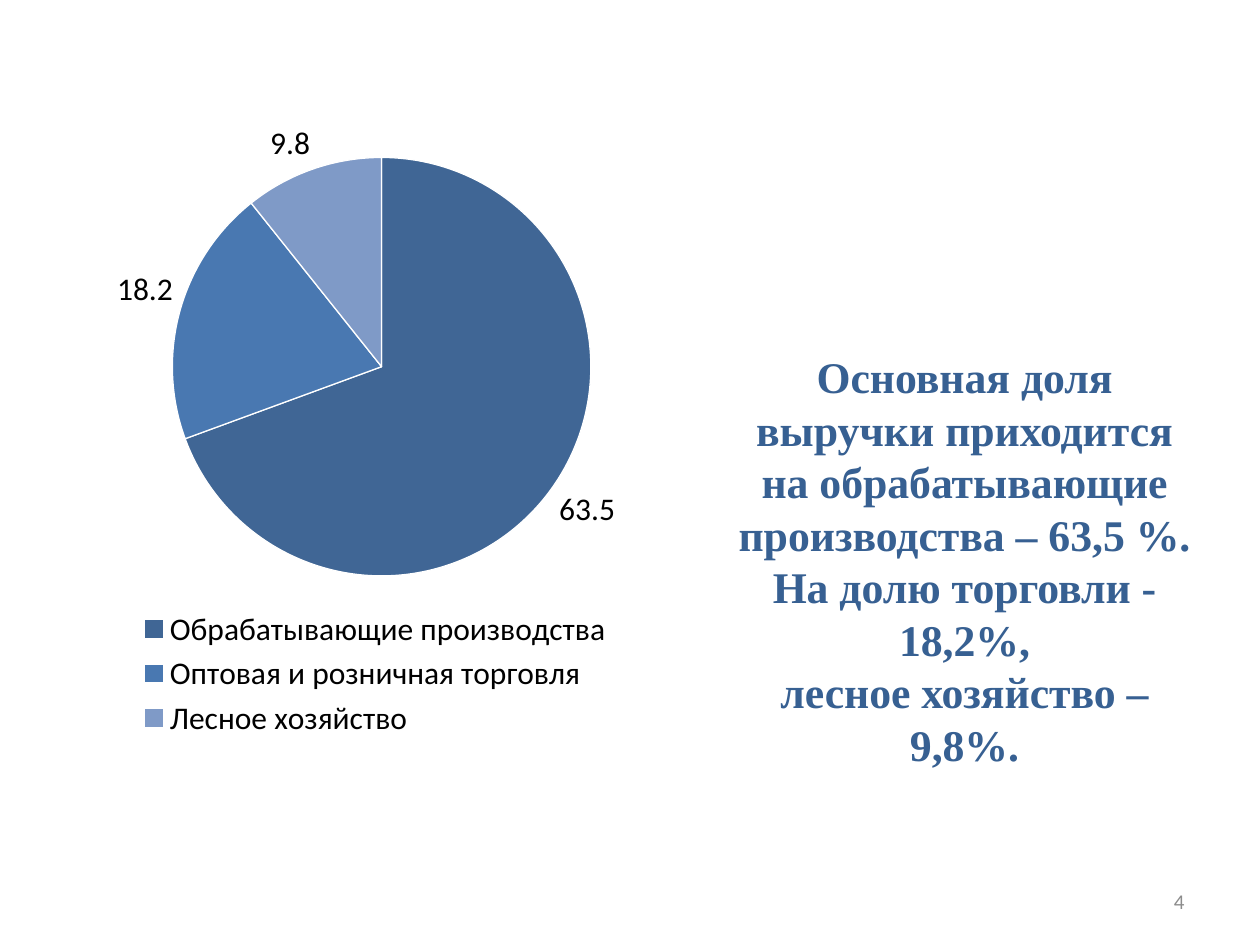
from pptx import Presentation
from pptx.chart.data import CategoryChartData
from pptx.dml.color import RGBColor
from pptx.enum.chart import XL_CHART_TYPE as ChartType
from pptx.enum.chart import XL_LABEL_POSITION as LabelPosition
from pptx.enum.chart import XL_LEGEND_POSITION as LegendPosition
from pptx.enum.text import MSO_ANCHOR as Anchor
from pptx.enum.text import PP_ALIGN as Align
from pptx.oxml import parse_xml
from pptx.oxml.ns import nsdecls
from pptx.util import Inches, Pt

COLORS = {
    "manufacturing": "406695",
    "trade": "4978B1",
    "forestry": "7F9AC7",
    "summary": "376092",
    "number": "8C8C8C",
    "label": "000000",
    "border": "FFFFFF",
}
REVENUE_SHARES = {
    "Обрабатывающие производства": 63.5,
    "Оптовая и розничная торговля": 18.2,
    "Лесное хозяйство": 9.8,
}
SUMMARY = [
    "Основная доля выручки приходится на обрабатывающие производства – 63,5 %.",
    "На долю торговли - 18,2%,",
    "лесное хозяйство – 9,8%.",
]


def color(name):
    return RGBColor.from_string(COLORS[name])


def format_font(font, size, fill, name="Calibri", bold=False):
    font.name = name
    font.size = Pt(size)
    font.bold = bold
    font.color.rgb = color(fill)


def add_text(slide, box, lines, align, anchor=Anchor.TOP, spacing=None, **font_format):
    frame = slide.shapes.add_textbox(*box).text_frame
    frame.word_wrap = True
    frame.vertical_anchor = anchor
    for index, line in enumerate(lines):
        paragraph = frame.paragraphs[0] if index == 0 else frame.add_paragraph()
        paragraph.alignment = align
        paragraph.line_spacing = spacing
        run = paragraph.add_run()
        run.text = line
        format_font(run.font, **font_format)


def set_pie_layout(chart, x, y, width, height):
    plot_area = chart.plots[0]._element.getparent()
    for layout in plot_area.findall("{*}layout"):
        plot_area.remove(layout)
    values = {"x": x, "y": y, "w": width, "h": height}
    parts = "".join(f'<c:{key} val="{value}"/>' for key, value in values.items())
    plot_area.insert(0, parse_xml(
        f'<c:layout {nsdecls("c")}><c:manualLayout><c:layoutTarget val="inner"/>'
        f'<c:xMode val="edge"/><c:yMode val="edge"/>{parts}'
        f'</c:manualLayout></c:layout>'
    ))


def add_revenue_chart(slide, box):
    data = CategoryChartData(number_format="0.0")
    data.categories = list(REVENUE_SHARES)
    data.add_series("Series 1", list(REVENUE_SHARES.values()))
    chart = slide.shapes.add_chart(ChartType.PIE, *box, data).chart
    chart.has_title = False
    format_font(chart.font, size=18, fill="label")

    chart.has_legend = True
    chart.legend.position = LegendPosition.BOTTOM
    chart.legend.include_in_layout = False

    plot = chart.plots[0]
    plot.vary_by_categories = True
    plot.has_data_labels = True
    plot.data_labels.show_value = True
    plot.data_labels.show_percentage = False
    plot.data_labels.position = LabelPosition.OUTSIDE_END
    for index, name in enumerate(("manufacturing", "trade", "forestry")):
        slice_format = plot.series[0].points[index].format
        slice_format.fill.solid()
        slice_format.fill.fore_color.rgb = color(name)
        slice_format.line.color.rgb = color("border")
        slice_format.line.width = Pt(0.75)
    set_pie_layout(chart, 0.2, 0.09, 0.62, 0.65)


def add_summary(slide, box):
    add_text(slide, box, SUMMARY, Align.CENTER, spacing=Pt(30), size=25,
             fill="summary", name="Times New Roman", bold=True)


def add_slide_number(slide, box):
    add_text(slide, box, ["4"], Align.RIGHT, anchor=Anchor.MIDDLE,
             size=12, fill="number")


def main():
    presentation = Presentation()
    presentation.slide_width = Inches(10)
    presentation.slide_height = Inches(7.5)
    slide = presentation.slides.add_slide(presentation.slide_layouts[6])
    add_slide_number(slide, (Inches(7.17), Inches(6.95), Inches(2.33), Inches(0.4)))
    add_revenue_chart(slide, (Inches(0.27), Inches(0.79), Inches(5.41), Inches(5.11)))
    add_summary(slide, (Inches(5.7), Inches(2.73), Inches(3.91), Inches(3.47)))
    presentation.save("out.pptx")


if __name__ == "__main__":
    main()
